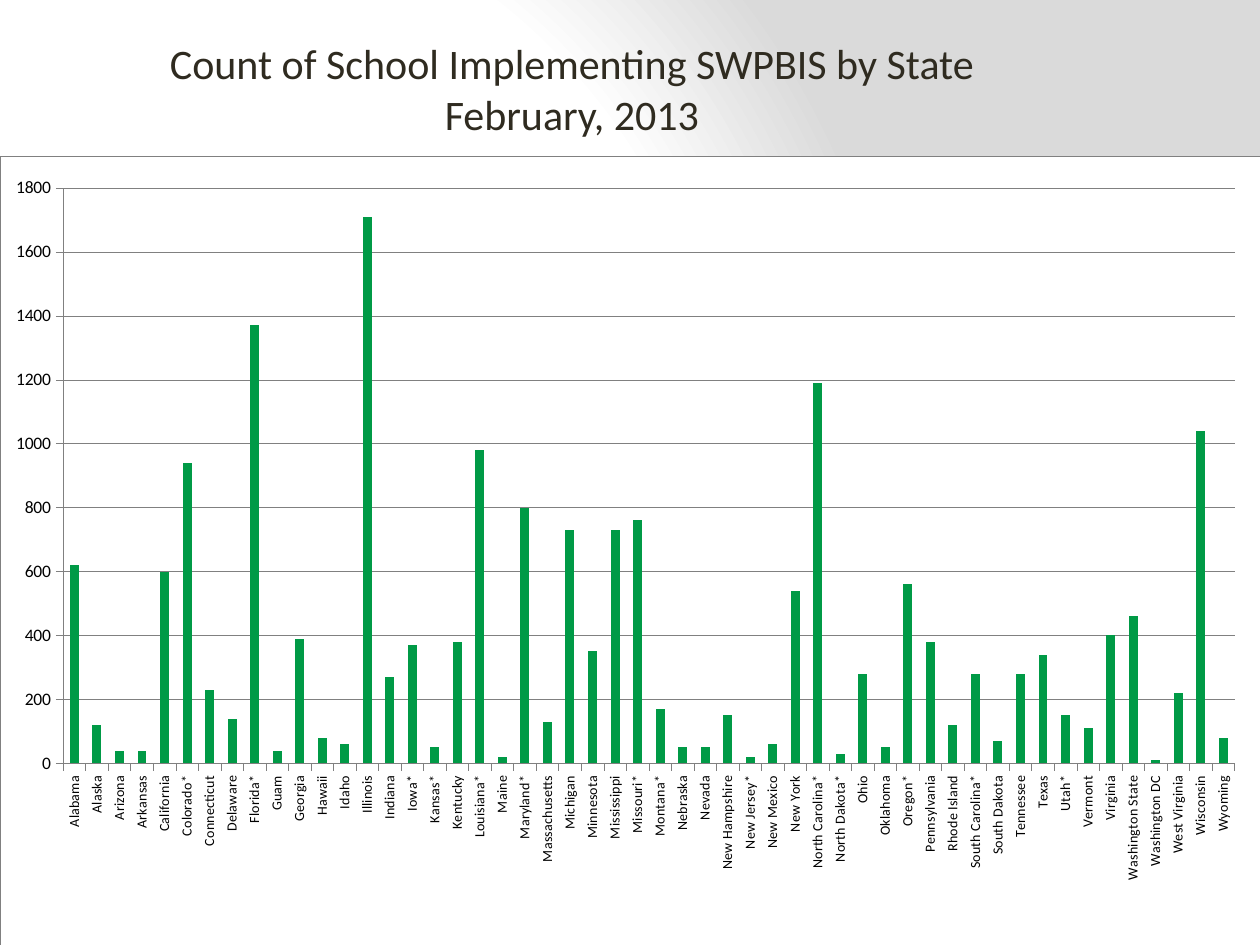
from pptx import Presentation
from pptx import oxml
from pptx.chart.data import CategoryChartData
from pptx.dml.color import RGBColor
from pptx.enum import chart as charts, text
from pptx.oxml import ns
from pptx.util import Inches, Pt

SCHOOLS = {
    "Alabama": 620, "Alaska": 120, "Arizona": 40, "Arkansas": 40, "California": 600,
    "Colorado*": 940, "Connecticut": 230, "Delaware": 140, "Florida*": 1370, "Guam": 40,
    "Georgia": 390, "Hawaii": 80, "Idaho": 60, "Illinois": 1710, "Indiana": 270,
    "Iowa*": 370, "Kansas*": 50, "Kentucky": 380, "Louisiana*": 980, "Maine": 20,
    "Maryland*": 800, "Massachusetts": 130, "Michigan": 730, "Minnesota": 350,
    "Mississippi": 730, "Missouri*": 760, "Montana*": 170, "Nebraska": 50, "Nevada": 50,
    "New Hampshire": 150, "New Jersey*": 20, "New Mexico": 60, "New York": 540,
    "North Carolina*": 1190, "North Dakota*": 30, "Ohio": 280, "Oklahoma": 50,
    "Oregon*": 560, "Pennsylvania": 380, "Rhode Island": 120, "South Carolina*": 280,
    "South Dakota": 70, "Tennessee": 280, "Texas": 340, "Utah*": 150, "Vermont": 110,
    "Virginia": 400, "Washington State": 460, "Washington DC": 10, "West Virginia": 220,
    "Wisconsin": 1040, "Wyoming": 80,
}


def color(value):
    return RGBColor.from_string(value)


class SlideBuilder:
    """Holds the slide and its style and adds each kind of element."""

    font_name = "Calibri"
    title_color = "2F2B20"
    text_color = "000000"
    line_color = "808080"
    bar_color = "009A46"

    def __init__(self, presentation):
        self.slide = presentation.slides.add_slide(presentation.slide_layouts[5])

    def style_font(self, font, size, font_color):
        font.name, font.size, font.bold = self.font_name, Pt(size), False
        font.color.rgb = color(font_color)

    def style_line(self, line):
        line.color.rgb = color(self.line_color)
        line.width = Pt(0.25)

    def set_background(self, stops, focus):
        self.slide.background.fill.solid()
        properties = self.slide.element.find(".//" + ns.qn("p:bgPr"))
        stop_xml = "".join(
            f'<a:gs pos="{position * 1000}"><a:srgbClr val="{value}"/></a:gs>'
            for position, value in stops)
        edges = " ".join(f'{side}="{share * 1000}"' for side, share in zip("ltrb", focus))
        properties.replace(properties[0], oxml.parse_xml(
            f'<a:gradFill {ns.nsdecls("a")} rotWithShape="1"><a:gsLst>{stop_xml}</a:gsLst>'
            f'<a:path path="circle"><a:fillToRect {edges}/></a:path></a:gradFill>'))

    def add_title(self, lines, left, top, width, height):
        title = self.slide.shapes.title
        title.left, title.top = Inches(left), Inches(top)
        title.width, title.height = Inches(width), Inches(height)
        frame = title.text_frame
        frame.text = "\n".join(lines)
        frame.word_wrap = True
        frame.auto_size = text.MSO_AUTO_SIZE.SHAPE_TO_FIT_TEXT
        frame.vertical_anchor = text.MSO_ANCHOR.TOP
        for paragraph in frame.paragraphs:
            paragraph.alignment = text.PP_ALIGN.CENTER
            self.style_font(paragraph.font, 24, self.title_color)

    def add_column_chart(self, values, left, top, width, height, plot):
        data = CategoryChartData(number_format="0")
        data.categories = values.keys()
        data.add_series("Series 1", values.values())
        chart = self.slide.shapes.add_chart(
            charts.XL_CHART_TYPE.COLUMN_CLUSTERED, Inches(left), Inches(top),
            Inches(width), Inches(height), data).chart
        chart.has_legend = chart.has_title = False
        self.style_font(chart.font, 10, self.text_color)
        bars = chart.plots[0]
        bars.gap_width, bars.vary_by_categories = 150, False
        bars.series[0].format.fill.solid()
        bars.series[0].format.fill.fore_color.rgb = color(self.bar_color)
        self.style_axis(chart.category_axis, 8)
        self.style_axis(chart.value_axis, 10)
        labels = chart.category_axis.tick_labels.font
        chart.category_axis.format.line.width = Pt(0.25)
        self.style_font(labels, 8, self.text_color)
        body = chart.category_axis._element.find(f'{ns.qn("c:txPr")}/{ns.qn("a:bodyPr")}')
        body.set("rot", "-5400000")
        body.set("vert", "horz")
        axis = chart.value_axis
        axis.minimum_scale, axis.maximum_scale, axis.major_unit = 0, 1800, 200
        axis.has_major_gridlines = True
        self.style_line(axis.major_gridlines.format.line)
        axis.tick_labels.number_format = "0"
        axis.tick_labels.number_format_is_linked = False
        self.style_areas(chart, plot)

    def style_axis(self, axis, size):
        axis.major_tick_mark = charts.XL_TICK_MARK.OUTSIDE
        axis.minor_tick_mark = charts.XL_TICK_MARK.NONE
        self.style_line(axis.format.line)
        self.style_font(axis.tick_labels.font, size, self.text_color)

    def style_areas(self, chart, plot):
        white = '<a:solidFill><a:srgbClr val="FFFFFF"/></a:solidFill>'
        border = (f'<a:ln w="{Pt(0.25)}"><a:solidFill><a:srgbClr val="{self.line_color}"/>'
                  '</a:solidFill></a:ln>')
        area_xml = f'<c:spPr {ns.nsdecls("c", "a")}>{white}%s</c:spPr>'
        space = chart.element.find(ns.qn("c:chart"))
        space.addnext(oxml.parse_xml(area_xml % border))
        plot_area = space.find(ns.qn("c:plotArea"))
        for layout in plot_area.findall(ns.qn("c:layout")):
            plot_area.remove(layout)
        modes = '<c:layoutTarget val="inner"/><c:xMode val="edge"/><c:yMode val="edge"/>'
        places = "".join(f'<c:{key} val="{share}"/>' for key, share in zip("xywh", plot))
        plot_area.insert(0, oxml.parse_xml(
            f'<c:layout {ns.nsdecls("c")}><c:manualLayout>{modes}{places}'
            '</c:manualLayout></c:layout>'))
        plot_area.append(oxml.parse_xml(area_xml % "<a:ln><a:noFill/></a:ln>"))


def main():
    presentation = Presentation()
    presentation.slide_width, presentation.slide_height = Inches(10), Inches(7.5)
    builder = SlideBuilder(presentation)
    builder.set_background([(0, "FFFFFF"), (75, "FFFFFF"), (100, "DADADA")],
                           (20, 50, 100, 50))
    builder.add_title(["Count of School Implementing SWPBIS by State", "February, 2013"],
                      0.33, 0.25, 8.42, 0.91)
    builder.add_column_chart(SCHOOLS, 0, 1.24, 10, 6.26, (0.05, 0.04, 0.93, 0.73))
    presentation.save("out.pptx")


if __name__ == "__main__":
    main()
